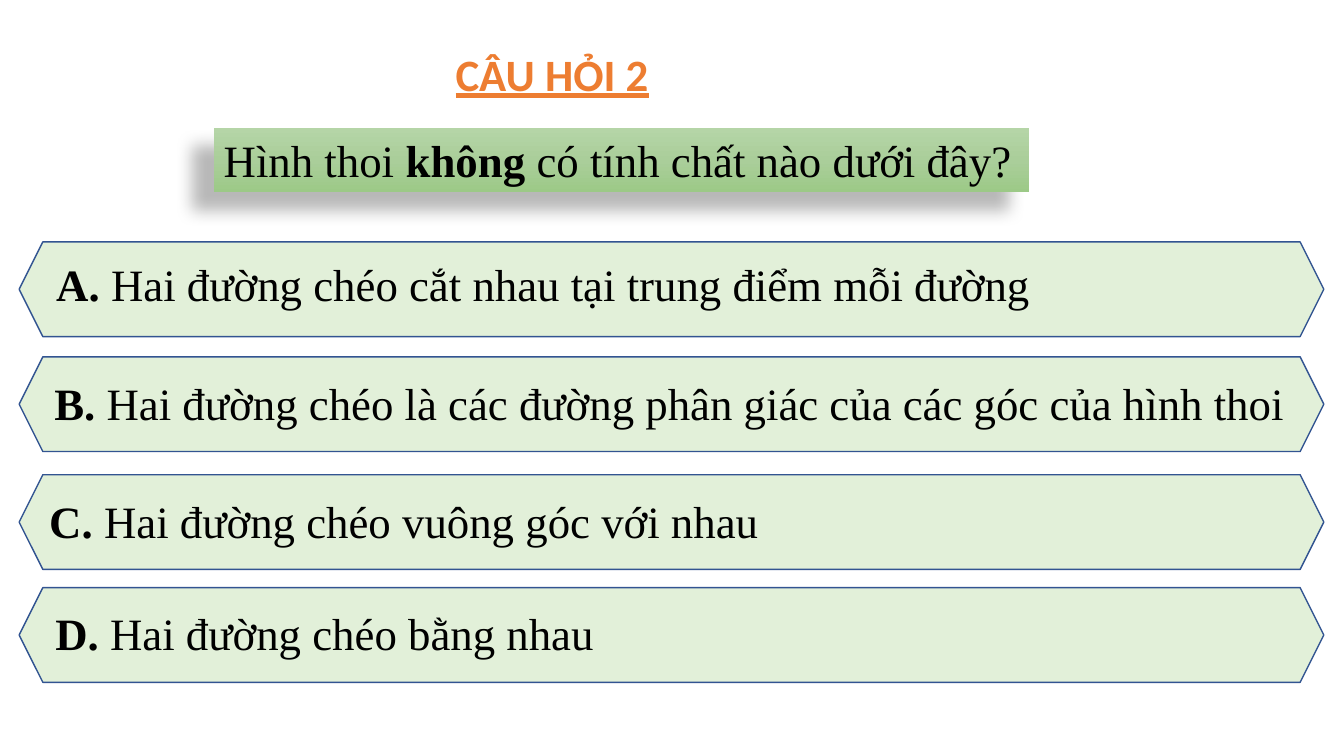
from copy import deepcopy
from dataclasses import dataclass

from pptx import Presentation
from pptx import util as u
from pptx.dml import color
from pptx.enum import shapes, text
from pptx.oxml import ns, parse_xml


@dataclass(frozen=True)
class Theme:
    head: str = "ED7D31"
    ink: str = "000000"
    bar: str = "E2F0D9"
    edge: str = "325491"
    grad: tuple = ("B5D5A7", "AACE9A", "9CC987")
    sans: str = "Calibri"
    serif: str = "Times New Roman"
    size: int = 32


THEME = Theme()

# Each answer: bar top, text left, text top, text width, wrap, letter, words
ANSWERS = [
    (2.4, 0.46, 2.5, 10.33, True, "A. ",
     "Hai đường chéo cắt nhau tại trung điểm mỗi đường"),
    (3.54, 0.44, 3.68, 12.56, True, "B. ",
     "Hai đường chéo là các đường phân giác của các góc của hình thoi"),
    (4.71, 0.39, 4.85, 7.3, False, "C. ",
     "Hai đường chéo vuông góc với nhau"),
    (5.83, 0.45, 5.96, 5.6, False, "D. ",
     "Hai đường chéo bằng nhau"),
]


def rgb(code):
    return color.RGBColor.from_string(code)


def place(box):
    return [u.Inches(side) for side in box]


def write(shape, runs, font, ink, wrap=True, line=False):
    """Fill a shape with one left-aligned paragraph of (words, bold) runs."""
    frame = shape.text_frame
    frame.word_wrap = wrap
    frame.auto_size = text.MSO_AUTO_SIZE.SHAPE_TO_FIT_TEXT
    frame.vertical_anchor = text.MSO_ANCHOR.TOP
    para = frame.paragraphs[0]
    para.alignment = text.PP_ALIGN.LEFT
    for words, bold in runs:
        run = para.add_run()
        run.text = words
        run.font.name = font
        run.font.size = u.Pt(THEME.size)
        run.font.bold = bold
        run.font.underline = line
        run.font.color.rgb = rgb(ink)


def add_title(slide, box):
    label = slide.shapes.add_textbox(*place(box))
    write(label, [("CÂU HỎI 2", True)], THEME.sans, THEME.head, line=True)


def shade(shape):
    """Give the shape a three-stop gradient and a soft shadow to lower left."""
    shape.fill.gradient()
    shape.fill.gradient_angle = 270
    stops = shape.element.spPr.find(".//" + ns.qn("a:gsLst"))
    stops.insert(1, deepcopy(stops[0]))
    stops[1].set("pos", "50000")
    for stop, code in zip(shape.fill.gradient_stops, THEME.grad):
        stop.color.rgb = rgb(code)
    shape.shadow.inherit = False
    effects = shape.element.spPr.find(ns.qn("a:effectLst"))
    effects.append(parse_xml(
        f'<a:outerShdw {ns.nsdecls("a")} blurRad="{u.Pt(11.8)}" '
        f'dist="{u.Pt(19.7)}" dir="{141 * 60000}" algn="ctr" rotWithShape="0">'
        f'<a:srgbClr val="{THEME.ink}"><a:alpha val="28000"/></a:srgbClr>'
        '</a:outerShdw>'))


def add_question(slide, box):
    panel = slide.shapes.add_shape(shapes.MSO_SHAPE.RECTANGLE, *place(box))
    shade(panel)
    panel.line.fill.background()
    runs = [("Hình thoi ", False), ("không ", True),
            ("có tính chất nào dưới đây?", False)]
    write(panel, runs, THEME.serif, THEME.ink, wrap=False)


def add_bar(slide, box):
    bar = slide.shapes.add_shape(shapes.MSO_SHAPE.HEXAGON, *place(box))
    bar.shadow.inherit = False
    bar.fill.solid()
    bar.fill.fore_color.rgb = rgb(THEME.bar)
    bar.line.color.rgb = rgb(THEME.edge)
    bar.line.width = u.Pt(1)


def add_answers(slide, left, width):
    for top, x, y, wide, wrap, letter, words in ANSWERS:
        add_bar(slide, (left, top, width, 0.94))
        label = slide.shapes.add_textbox(*place((x, y, wide, 0.64)))
        write(label, [(letter, True), (words, False)],
              THEME.serif, THEME.ink, wrap)


def main():
    deck = Presentation()
    deck.slide_width = u.Inches(13.33)
    deck.slide_height = u.Inches(7.5)
    slide = deck.slides.add_slide(deck.slide_layouts[6])
    add_title(slide, (4.42, 0.41, 3.36, 0.59))
    add_question(slide, (2.12, 1.27, 8.09, 0.64))
    add_answers(slide, 0.19, 12.94)
    deck.save("out.pptx")


if __name__ == "__main__":
    main()
